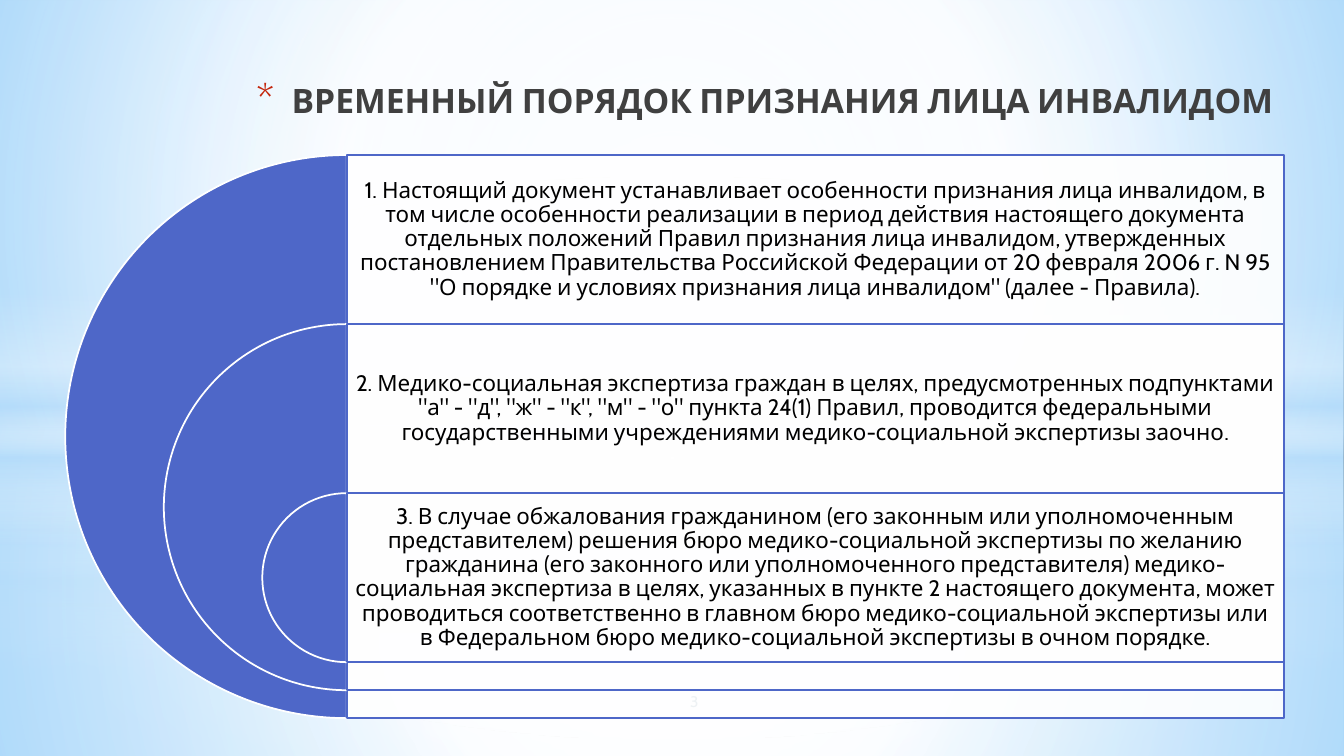
from lxml.etree import SubElement as Sub
from pptx import Presentation
from pptx.dml.color import RGBColor as Rgb
from pptx.enum.shapes import MSO_SHAPE as Geo
from pptx.enum.text import MSO_ANCHOR as Anchor, PP_ALIGN as Align
from pptx.oxml.ns import qn
from pptx.util import Pt

WIDE, HIGH = 960, 540
FONT = "Cabin"
HEX = {
    "white": "FFFFFF", "sky": "B4DCFA", "blue": "4E67C8", "black": "000000",
    "title": "404040", "star": "C3260C", "faint": "EDF1F4",
    "edge": "5BB9FF", "core": "9ED5FF",
}
TITLE = "ВРЕМЕННЫЙ ПОРЯДОК ПРИЗНАНИЯ ЛИЦА ИНВАЛИДОМ"
RULES = [
    "1. Настоящий документ устанавливает особенности признания лица инвалидом, "
    "в том числе особенности реализации в период действия настоящего документа "
    "отдельных положений Правил признания лица инвалидом, утвержденных "
    "постановлением Правительства Российской Федерации от 20 февраля 2006 г. "
    "N 95 \"О порядке и условиях признания лица инвалидом\" (далее - Правила).",
    "2. Медико-социальная экспертиза граждан в целях, предусмотренных "
    "подпунктами \"а\" - \"д\", \"ж\" - \"к\", \"м\" - \"о\" пункта 24(1) Правил, "
    "проводится федеральными государственными учреждениями "
    "медико-социальной экспертизы заочно.",
    "3. В случае обжалования гражданином (его законным или уполномоченным "
    "представителем) решения бюро медико-социальной экспертизы по желанию "
    "гражданина (его законного или уполномоченного представителя) "
    "медико-социальная экспертиза в целях, указанных в пункте 2 настоящего "
    "документа, может проводиться соответственно в главном бюро "
    "медико-социальной экспертизы или в Федеральном бюро медико-социальной "
    "экспертизы в очном порядке.",
]
PAGE = "3"

BACK = [(0, "core", 100), (60, "white", 100), (100, "edge", 100)]
BAND = [(0, "white", 0), (29, "white", 30), (45, "sky", 40),
        (55, "white", 26), (65, "sky", 60), (100, "white", 0)]
MID = (50, 50, 50, 50)


def glow(near, stop, far, last):
    return [(0, "white", near), (stop, "white", far), (100, "sky", last)]


def halo(stop):
    return [(0, "white", 100), (stop, "white", 0)]


LIGHTS = [
    (Geo.RECTANGLE, 401.76, 138.24, glow(91, 37, 76, 79), MID),
    (Geo.RECTANGLE, 0, 401.76, glow(89, 48, 62, 79), MID),
    (Geo.RECTANGLE, 296.64, 180, BAND, None),
    (Geo.OVAL, 126, 401.76, halo(56), MID),
    (Geo.RECTANGLE, 304.56, 235.44, glow(92, 37, 77, 80), MID),
    (Geo.RECTANGLE, 0, 304.56, glow(90, 48, 63, 80), MID),
    (Geo.RECTANGLE, 208.8, 180, BAND, None),
    (Geo.OVAL, 126, 401.76, halo(54), MID),
]

AXIS, TOP, SPAN = 247.75, 110.75, 669.6
RING, STEP, SHRINK = 402.25, 120.75, 140.75


def color(key):
    return Rgb.from_string(HEX[key])


def shade(fill, root, stops, focus):
    fill.gradient()
    grad = root.find(".//" + qn("a:gradFill"))
    grad.clear()
    grad.set("rotWithShape", "1")
    group = Sub(grad, qn("a:gsLst"))
    for pos, key, alpha in stops:
        stop = Sub(group, qn("a:gs"), pos=str(pos * 1000))
        tint = Sub(stop, qn("a:srgbClr"), val=HEX[key])
        if alpha < 100:
            Sub(tint, qn("a:alpha"), val=str(alpha * 1000))
    if focus:
        way = Sub(grad, qn("a:path"), path="circle")
        Sub(way, qn("a:fillToRect"),
            {side: str(part * 1000) for side, part in zip("ltrb", focus)})
    else:
        Sub(grad, qn("a:lin"), ang="5400000", scaled="0")


def block(slide, geo, box, fill=None, line=None):
    shape = slide.shapes.add_shape(geo, *map(Pt, box))
    shape.shadow.inherit = False
    if fill:
        shape.fill.solid()
        shape.fill.fore_color.rgb = color(fill)
    if line:
        shape.line.color.rgb = color(line)
        shape.line.width = Pt(1.25)
    else:
        shape.line.fill.background()
    return shape


def write(slide, box, text, size, key, align, anchor, pad, bold=False):
    frame = slide.shapes.add_textbox(*map(Pt, box)).text_frame
    frame.word_wrap = True
    frame.vertical_anchor = anchor
    frame.margin_left = frame.margin_right = Pt(pad[0])
    frame.margin_top = frame.margin_bottom = Pt(pad[1])
    para = frame.paragraphs[0]
    para.alignment = align
    run = para.add_run()
    run.text = text
    font = run.font
    font.name, font.size, font.bold = FONT, Pt(size), bold
    font.color.rgb = color(key)
    return para


def star(para):
    props = para._p.get_or_add_pPr()
    props.set("marL", str(Pt(25.2)))
    props.set("indent", str(Pt(-25.2)))
    Sub(Sub(props, qn("a:buClr")), qn("a:srgbClr"), val=HEX["star"])
    Sub(props, qn("a:buSzPct"), val="128000")
    Sub(props, qn("a:buFont"), typeface=FONT)
    Sub(props, qn("a:buChar"), char="*")


def level(slide, row, text):
    size, top = RING - row * SHRINK, TOP + row * STEP
    pie = block(slide, Geo.PIE, (AXIS - size / 2, top, size, size),
                "blue", "white")
    pie.adjustments[0], pie.adjustments[1] = 54, 162
    panel = block(slide, Geo.RECTANGLE, (AXIS, top, SPAN, size),
                  "white", "blue")
    tint = panel.element.spPr.find(qn("a:solidFill")).find(qn("a:srgbClr"))
    Sub(tint, qn("a:alpha"), val="90000")
    para = write(slide, (AXIS, top, SPAN, STEP), text, 16, "black",
                 Align.CENTER, Anchor.MIDDLE, (5, 5))
    para.line_spacing = 0.9


def main():
    """Build the slide on the temporary disability procedure."""
    deck = Presentation()
    deck.slide_width, deck.slide_height = Pt(WIDE), Pt(HIGH)
    slide = deck.slides.add_slide(deck.slide_layouts[6])
    shade(slide.background.fill, slide.element, BACK, (20, 10, 20, 60))
    for geo, top, high, stops, focus in LIGHTS:
        light = block(slide, geo, (0, top, WIDE, high))
        shade(light.fill, light.element, stops, focus)
    star(write(slide, (49.7, 46.8, 866.9, 42.5), TITLE, 24, "title",
               Align.RIGHT, Anchor.BOTTOM, (7.2, 3.6), True))
    for row, text in enumerate(RULES):
        level(slide, row, text)
    write(slide, (466, 491, 60, 20), PAGE, 11, "faint",
          Align.CENTER, Anchor.MIDDLE, (0, 0))
    deck.save("out.pptx")


if __name__ == "__main__":
    main()
